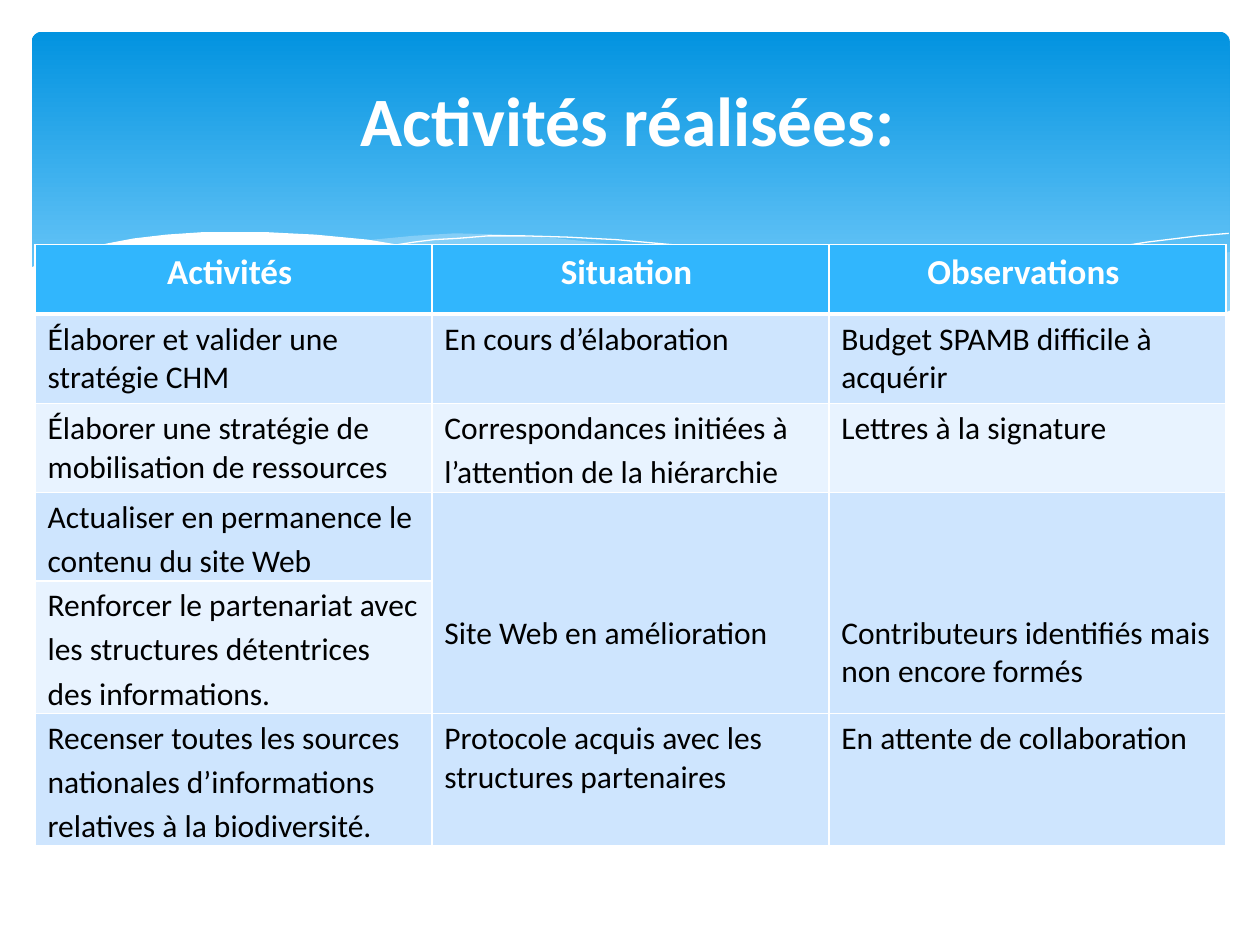
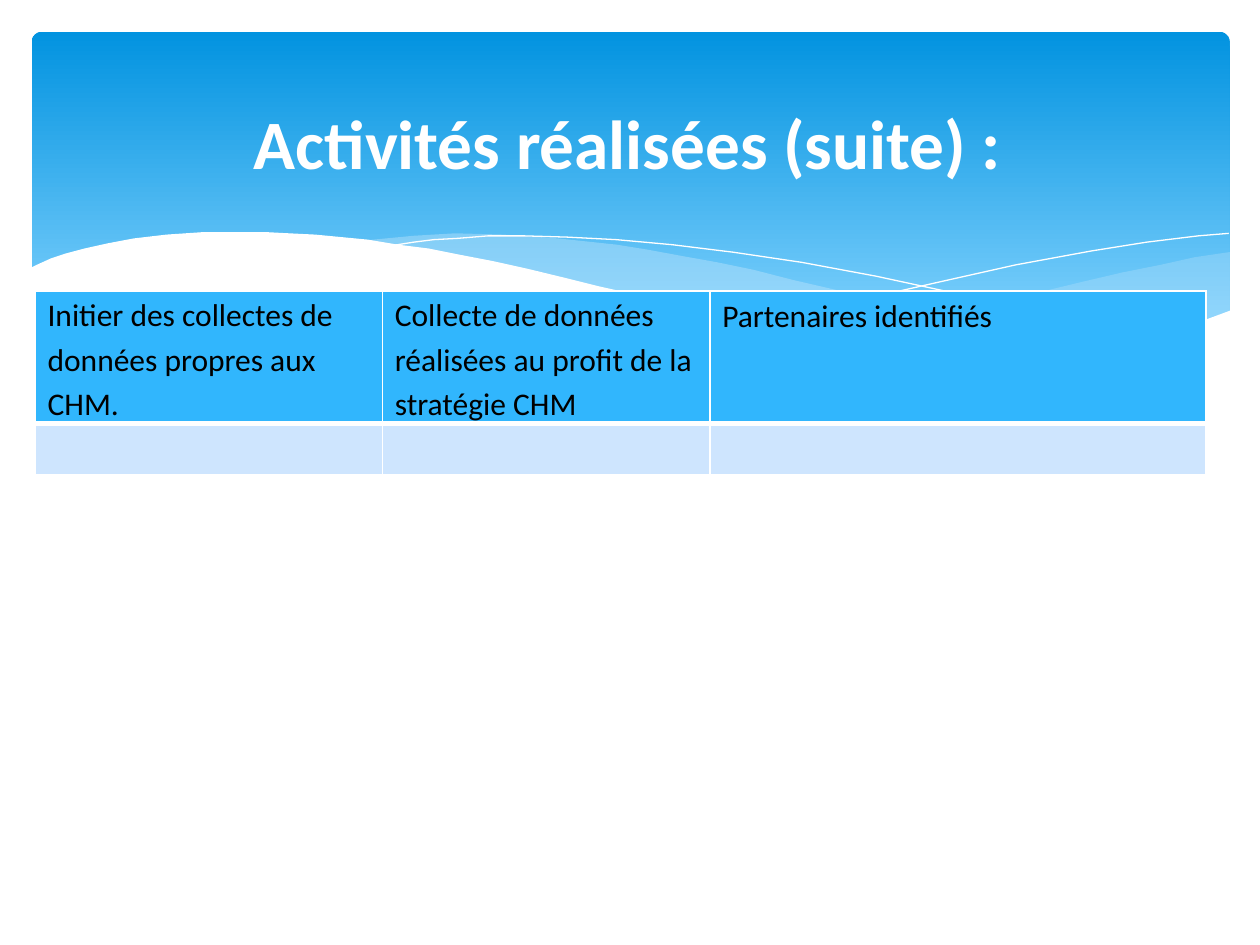
from collections import namedtuple
from lxml.etree import SubElement
from pptx import Presentation
from pptx.dml.color import RGBColor
from pptx.enum.shapes import MSO_SHAPE as Preset
from pptx.enum.text import MSO_ANCHOR as Anchor, PP_ALIGN as Align
from pptx.oxml.ns import qn
from pptx.util import Cm, Pt

Box = namedtuple("Box", "left top width height")
Cell = namedtuple("Cell", "text loose top_margin", defaults=(False, 0.13))

FONT = "Calibri"
WHITE, BLACK, PALE_WAVE = "FFFFFF", "000000", "C6E7FC"
BAND_TOP, BAND_BOTTOM = "0293E0", "83D3FE"
HEADER_FILL, ROW_FILLS = "31B6FD", ("CEE5FE", "E8F3FF")

BAND = Box(0.64, 0.64, 24.15, 6.86)
WAVE_UNIT = Cm(0.0254)
RIGHT_SWELL = [
    (950, 175), (923, 179), (896, 185), (866, 191), (836, 198), (807, 205),
    (780, 212), (754, 217), (728, 223), (704, 228), (681, 232), (636, 240),
    (666, 244), (694, 247), (720, 250), (744, 252), (767, 252), (799, 252),
    (829, 251), (856, 249), (880, 245), (903, 240), (924, 232), (951, 222),
    (951, 175)]
MIDDLE_SWELL = [
    (868, 248), (841, 244), (812, 240), (782, 235), (750, 229), (716, 222),
    (643, 206), (604, 197), (573, 189), (544, 183), (516, 178), (489, 173),
    (464, 169), (417, 164), (374, 161), (336, 160), (303, 162), (261, 166),
    (298, 171), (337, 178), (379, 186), (424, 197), (466, 207), (505, 215),
    (541, 223), (576, 230), (609, 236), (640, 241), (670, 245), (697, 249),
    (723, 251), (748, 252), (771, 253), (803, 253), (832, 252), (859, 249)]
FALLING_LINE = [
    (284, 170), (303, 167), (319, 165), (338, 164), (362, 162), (391, 162),
    (425, 163), (464, 165), (508, 169), (557, 175), (611, 183), (670, 194),
    (735, 208), (806, 226), (882, 247)]
RISING_LINE = [
    (588, 232), (628, 221), (670, 210), (723, 198), (781, 185), (841, 174),
    (885, 167), (926, 162), (950, 160)]
WHITE_FRONT = [
    (952, 221), (925, 231), (895, 240), (862, 246), (825, 250), (784, 252),
    (753, 251), (719, 249), (683, 245), (643, 240), (601, 233), (554, 225),
    (504, 214), (450, 202), (422, 195), (393, 188), (366, 182), (340, 177),
    (315, 172), (291, 169), (267, 165), (246, 163), (225, 161), (205, 160),
    (186, 159), (168, 159), (136, 159), (107, 161), (81, 164), (60, 168),
    (42, 172), (27, 176), (15, 180), (4, 185), (-2, 188), (-2, 304), (952, 304)]

ACTIVITIES = [
    [Cell("Activités "), Cell("Situation "), Cell("Observations ")],
    [Cell("Élaborer et valider une stratégie CHM"),
     Cell("En cours d’élaboration"),
     Cell("Budget SPAMB difficile à acquérir")],
    [Cell("Élaborer une stratégie de mobilisation de ressources"),
     Cell("Correspondances initiées à l’attention de la hiérarchie", True),
     Cell("Lettres à la signature")],
    [Cell("Actualiser en permanence le contenu du site Web", True),
     Cell("Site Web en amélioration", top_margin=2.45),
     Cell("Contributeurs identifiés mais non encore formés", top_margin=2.45)],
    [Cell("Renforcer le partenariat avec les structures détentrices des informations.", True),
     Cell(""), Cell("")],
    [Cell("Recenser toutes les sources nationales d’informations relatives à la biodiversité.", True),
     Cell("Protocole acquis avec les structures partenaires"),
     Cell("En attente de collaboration")]]
MORE_ACTIVITIES = [
    [Cell("Initier des collectes de données propres aux CHM.", True),
     Cell("Collecte de données réalisées au profit de la stratégie CHM", True),
     Cell("Partenaires identifiés")],
    [Cell("")] * 3]


def color(hex_code):
    return RGBColor.from_string(hex_code)


def place(box):
    return [Cm(length) for length in box]


def add_run(paragraph, text, size, hex_code, bold):
    run = paragraph.add_run()
    run.text = text
    font = run.font
    font.name, font.size, font.bold = FONT, Pt(size), bold
    font.color.rgb = color(hex_code)


def add_wave(slide, box, points, fill=None, opacity=100):
    builder = slide.shapes.build_freeform(*points[0], scale=WAVE_UNIT)
    builder.add_line_segments(points[1:], close=fill is not None)
    wave = builder.convert_to_shape(Cm(box.left), Cm(box.top))
    wave.shadow.inherit = False
    if fill is None:
        wave.fill.background()
        wave.line.color.rgb = color(WHITE)
        wave.line.width = Pt(0)
        return
    wave.line.fill.background()
    wave.fill.solid()
    wave.fill.fore_color.rgb = color(fill)
    if opacity < 100:
        fill_color = wave.fill._xPr.find(qn("a:solidFill"))[0]
        SubElement(fill_color, qn("a:alpha"), val=str(opacity * 1000))


def add_band(slide, box):
    band = slide.shapes.add_shape(Preset.ROUNDED_RECTANGLE, *place(box))
    band.adjustments[0] = 0.03
    band.shadow.inherit = False
    band.line.fill.background()
    band.fill.gradient()
    band.fill.gradient_angle = 270
    stops = zip(band.fill.gradient_stops, (0, 0.9), (BAND_TOP, BAND_BOTTOM))
    for stop, position, hex_code in stops:
        stop.position = position
        stop.color.rgb = color(hex_code)
    add_wave(slide, box, RIGHT_SWELL, PALE_WAVE, 29)
    add_wave(slide, box, MIDDLE_SWELL, PALE_WAVE, 40)
    add_wave(slide, box, FALLING_LINE)
    add_wave(slide, box, RISING_LINE)
    add_wave(slide, box, WHITE_FRONT, WHITE)


def add_title(slide, box, text):
    frame = slide.shapes.add_textbox(*place(box)).text_frame
    frame.word_wrap = True
    frame.vertical_anchor = Anchor.MIDDLE
    paragraph = frame.paragraphs[0]
    paragraph.alignment = Align.CENTER
    add_run(paragraph, text, 39.6, WHITE, True)


def add_borders(cell, widths):
    properties = cell._tc.get_or_add_tcPr()
    for side, width in zip("LRTB", widths):
        line = SubElement(properties, qn(f"a:ln{side}"), w=str(Pt(width)))
        fill = SubElement(line, qn("a:solidFill"))
        SubElement(fill, qn("a:srgbClr"), val=WHITE)


def fill_cell(cell, content, fill, is_top, is_heading):
    add_borders(cell, (1, 1, 1, 3 if is_top else 1))
    cell.fill.solid()
    cell.fill.fore_color.rgb = color(fill)
    cell.margin_left = cell.margin_right = Cm(0.25)
    cell.margin_top = Cm(0 if content.loose else content.top_margin)
    cell.margin_bottom = Cm(0 if content.loose else 0.13)
    paragraph = cell.text_frame.paragraphs[0]
    if content.loose:
        paragraph.line_spacing = 1.15
    if is_heading:
        paragraph.alignment = Align.CENTER
        add_run(paragraph, content.text, 20, WHITE, True)
    elif content.text:
        add_run(paragraph, content.text, 18, BLACK, False)


def add_activity_table(slide, box, rows, widths, heights, has_headings):
    frame = slide.shapes.add_table(len(rows), len(widths), *place(box))
    table = frame.table
    for column, width in zip(table.columns, widths):
        column.width = Cm(width)
    for row, height in zip(table.rows, heights):
        row.height = Cm(height)
    for row_index, contents in enumerate(rows):
        is_top = row_index == 0
        fill = HEADER_FILL if is_top else ROW_FILLS[(row_index - 1) % 2]
        for column_index, content in enumerate(contents):
            fill_cell(table.cell(row_index, column_index), content, fill,
                      is_top, is_top and has_headings)
    return table


def add_activity_slide(presentation, title, title_top, table_box, rows,
                       widths, heights, has_headings):
    slide = presentation.slides.add_slide(presentation.slide_layouts[6])
    add_band(slide, BAND)
    add_title(slide, Box(2.97, title_top, 19.69, 3.18), title)
    return add_activity_table(slide, table_box, rows, widths, heights, has_headings)


def main():
    presentation = Presentation()
    presentation.slide_width, presentation.slide_height = Cm(25.4), Cm(19.05)
    table = add_activity_slide(
        presentation, "Activités réalisées: ", 0.81, Box(0.71, 4.93, 24, 12.12),
        ACTIVITIES, [8] * 3, [1.4, 1.8, 1.8, 1.78, 2.67, 2.67], True)
    for column in (1, 2):
        table.cell(3, column).merge(table.cell(4, column))
    add_activity_slide(
        presentation, "Activités réalisées (suite) : ", 1.27, Box(0.71, 5.87, 23.6, 3.7),
        MORE_ACTIVITIES, [7, 6.6, 10], [2.67, 1.03], False)
    presentation.save("out.pptx")


if __name__ == "__main__":
    main()
